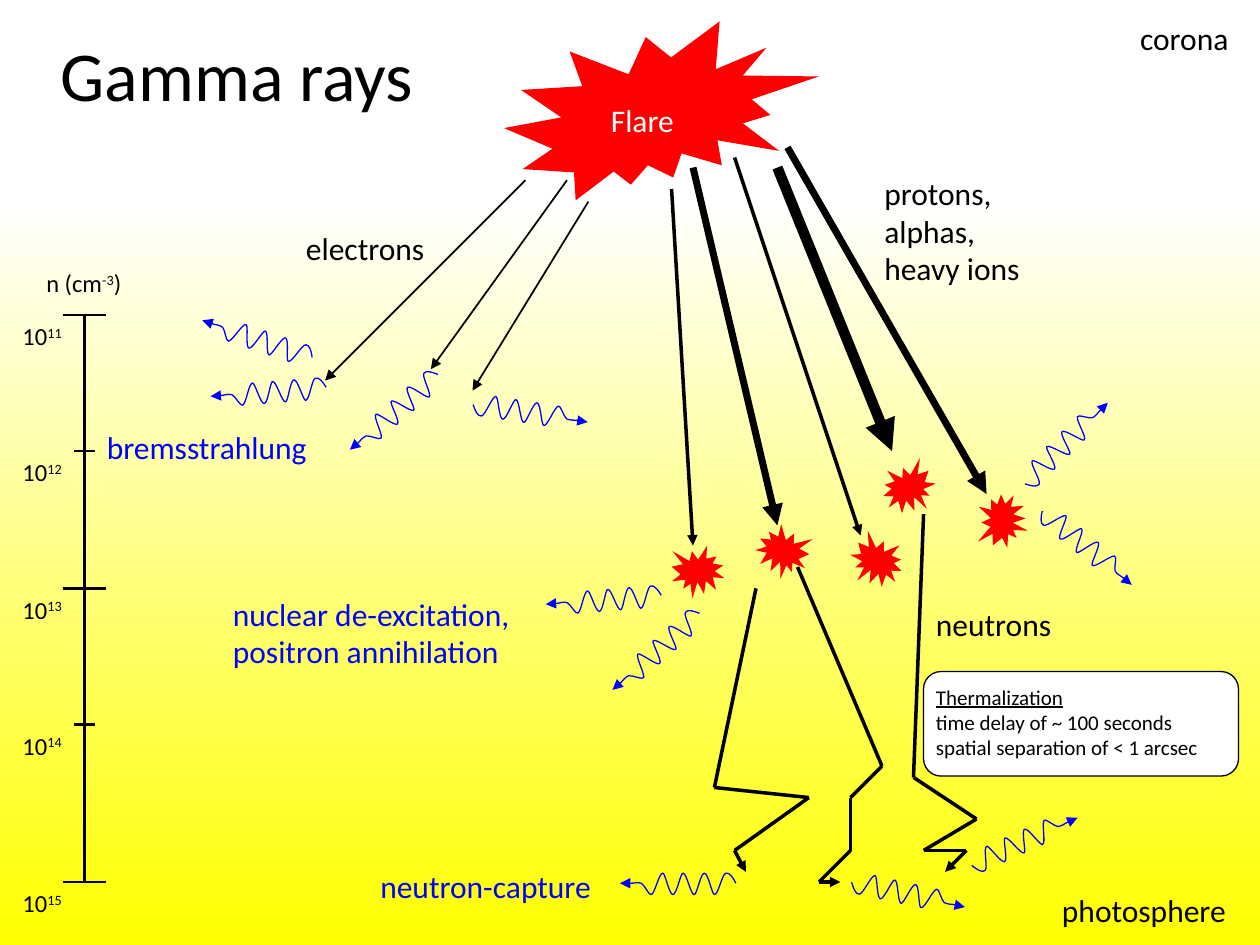
from itertools import pairwise

from lxml.etree import SubElement
from pptx import Presentation
from pptx.dml.color import RGBColor
from pptx.enum.shapes import MSO_CONNECTOR as CONNECTOR, MSO_SHAPE as SHAPE
from pptx.enum.text import MSO_ANCHOR as ANCHOR, PP_ALIGN as ALIGN
from pptx.oxml.ns import qn
from pptx.util import Cm, Pt

BLACK, WHITE, RED, BLUE, YELLOW = "000000", "FFFFFF", "FF0000", "0000FF", "FFFF00"
FONT = "Calibri"

PARTICLES = [
    ((4.5, 1.43), (3.42, 2.93), 1),
    ((4.67, 1.6), (3.75, 3.1), 1),
    ((4.17, 1.43), (2.58, 3.02), 1),
    ((5.33, 1.5), (5.5, 4.33), 2),
    ((5.83, 1.25), (6.83, 4.25), 2),
    ((5.5, 1.33), (6.17, 4.17), 4),
    ((6.25, 1.17), (7.83, 3.92), 4),
    ((6.17, 1.33), (7.08, 3.58), 6),
]
NEUTRON_TRACKS = [
    [(6.33, 4.5), (7, 6.08), (6.75, 6.33), (6.75, 6.75), (6.5, 7), (6.67, 7)],
    [(7.33, 4.08), (7.25, 6.17), (7.75, 6.5), (7.33, 6.75), (7.67, 6.75), (7.5, 6.92)],
    [(6, 4.67), (5.67, 6.25), (6.42, 6.33), (5.83, 6.75), (5.92, 6.92)],
]
BURSTS = [
    (5.33, 4.33, 0, False),
    (6, 4.17, 16.3, True),
    (6.75, 4.25, 34.5, False),
    (7, 3.67, 329.6, True),
    (7.75, 3.92, 280.5, False),
]
PHOTONS = [
    (1.58, 2.6, 198.7),
    (2.67, 3.18, 139.5),
    (3.75, 3.18, 8.7),
    (1.67, 3.02, 175.6),
    (4.33, 4.67, 175.6),
    (4.75, 5.08, 138.7),
    (8, 3.42, 315.6),
    (8.17, 4.25, 39.5),
    (7.67, 6.58, 335.7),
    (6.75, 7, 12.4),
    (4.92, 6.92, 180),
]
WAVE = [
    (0, 0),
    (2, 4), (5, 9), (8, 8), (11, 7), (14, -9), (17, -9),
    (19, -9), (22, 8), (25, 8), (28, 8), (31, -9), (33, -9),
    (36, -9), (39, 8), (42, 8), (44, 8), (47, -9), (50, -9),
    (53, -9), (56, 8), (58, 8), (61, 8), (64, -7), (67, -9),
    (69, -10), (72, -2), (75, 0), (78, 1), (81, 0), (83, 0),
    (86, 0), (89, 0), (92, 0),
]
LABELS = [
    ("Flare", 4.75, 0.75, 0.83, 0.4, WHITE),
    ("electrons", 2.33, 1.77, 1.25, 0.4, BLACK),
    ("protons, alphas, heavy ions", 6.92, 1.33, 1.42, 1, BLACK),
    ("neutrons", 7.33, 4.75, 1.25, 0.4, BLACK),
    ("bremsstrahlung", 0.75, 3.35, 2, 0.4, BLUE),
    ("nuclear de-excitation, positron annihilation", 1.75, 4.67, 2.67, 0.7, BLUE),
    ("neutron-capture", 2.92, 6.83, 2.08, 0.4, BLUE),
    ("photosphere", 8.33, 7.02, 1.75, 0.4, BLACK),
    ("corona", 8.95, 0.1, 0.97, 0.4, BLACK),
]
THERMALIZATION = [
    "Thermalization",
    "time delay of ~ 100 seconds",
    "spatial separation of < 1 arcsec",
]
AXIS_X = 0.67
TICKS = [
    (2.5, 0.17, "11"),
    (3.58, 0.085, "12"),
    (4.67, 0.17, "13"),
    (5.75, 0.085, "14"),
    (7, 0.17, "15"),
]


def inches(value):
    return Cm(value * 2.54)


def color(value):
    return RGBColor.from_string(value)


def add_arrowhead(line):
    SubElement(line._get_or_add_ln(), qn("a:tailEnd"), type="triangle")


def add_filled(shapes, kind, left, top, width, height, fill):
    shape = shapes.add_shape(kind, *map(inches, (left, top, width, height)))
    shape.shadow.inherit = False
    shape.fill.solid()
    shape.fill.fore_color.rgb = color(fill)
    shape.line.fill.background()
    return shape


def add_line(shapes, start, end, width, arrow=False):
    connector = shapes.add_connector(CONNECTOR.STRAIGHT, *map(inches, start + end))
    connector.line.color.rgb = color(BLACK)
    connector.line.width = Pt(width)
    if arrow:
        add_arrowhead(connector.line)
    SubElement(connector._element.spPr, qn("a:effectLst"))


def add_text(shapes, paragraphs, left, top, width, height, size, ink=BLACK,
             align=ALIGN.LEFT, wrap=True):
    box = shapes.add_textbox(*map(inches, (left, top, width, height)))
    frame = box.text_frame
    frame.word_wrap = wrap
    for index, runs in enumerate(paragraphs):
        paragraph = frame.paragraphs[0] if index == 0 else frame.add_paragraph()
        paragraph.alignment = align
        for text, raised in runs:
            run = paragraph.add_run()
            run.text = text
            run.font.name = FONT
            run.font.size = Pt(size)
            run.font.color.rgb = color(ink)
            if raised:
                run._r.get_or_add_rPr().set("baseline", "30000")
    return frame


def add_photon(shapes, left, top, rotation):
    builder = shapes.build_freeform(*WAVE[0], scale=inches(0.01))
    builder.add_line_segments(WAVE[1:], close=False)
    wave = builder.convert_to_shape()
    wave.left, wave.top, wave.rotation = inches(left), inches(top), rotation
    wave.shadow.inherit = False
    wave.fill.background()
    wave.line.color.rgb = color(BLUE)
    wave.line.width = Pt(0.75)
    add_arrowhead(wave.line)
    outline = next(wave._element.iter(qn("a:path")))
    segments = outline.findall(qn("a:lnTo"))
    for first in range(0, len(segments), 3):
        curve = SubElement(outline, qn("a:cubicBezTo"))
        for segment in segments[first:first + 3]:
            curve.append(segment[0])
            outline.remove(segment)


def main():
    presentation = Presentation()
    presentation.slide_width, presentation.slide_height = inches(10), inches(7.5)
    slide = presentation.slides.add_slide(presentation.slide_layouts[6])
    shapes = slide.shapes

    sky = add_filled(shapes, SHAPE.RECTANGLE, 0, 1.58, 10, 5.92, WHITE)
    sky.fill.gradient()
    sky.fill.gradient_angle = 270
    for stop, (position, tint) in zip(sky.fill.gradient_stops, [(0, WHITE), (1, YELLOW)]):
        stop.position = position
        stop.color.rgb = color(tint)
    add_filled(shapes, SHAPE.EXPLOSION2, 4, 0.17, 2.5, 1.42, RED)

    for start, end, width in PARTICLES:
        add_line(shapes, start, end, width, arrow=True)
    for track in NEUTRON_TRACKS:
        for start, end in pairwise(track):
            add_line(shapes, start, end, 2, arrow=end == track[-1])
    for photon in PHOTONS:
        add_photon(shapes, *photon)
    for left, top, rotation, flipped in BURSTS:
        burst = add_filled(shapes, SHAPE.EXPLOSION1, left, top, 0.42, 0.42, RED)
        burst.rotation = rotation
        if flipped:
            burst._element.spPr.xfrm.set("flipH", "1")

    for text, left, top, width, height, ink in LABELS:
        add_text(shapes, [[(text, False)]], left, top, width, height, 18, ink,
                 wrap=text != "corona")
    title = add_text(shapes, [[("Gamma rays", False)]], 0.17, 0.17, 3.42, 0.83, 40,
                     align=ALIGN.CENTER)
    title.vertical_anchor = ANCHOR.MIDDLE

    panel = add_filled(shapes, SHAPE.ROUNDED_RECTANGLE, 7.33, 5.33, 2.5, 0.83, WHITE)
    panel.line.color.rgb = color(BLACK)
    panel.line.width = Pt(0.75)
    note = add_text(shapes, [[(text, False)] for text in THERMALIZATION],
                    7.33, 5.38, 2.67, 0.7, 12)
    note.paragraphs[0].runs[0].font.underline = True

    add_text(shapes, [[("n (cm", False), ("-3", True), (")", False)]],
             0.08, 2.08, 1.17, 0.33, 14, align=ALIGN.CENTER)
    add_line(shapes, (AXIS_X, TICKS[0][0]), (AXIS_X, TICKS[-1][0]), 1.5)
    for y, reach, exponent in TICKS:
        add_line(shapes, (AXIS_X - reach, y), (AXIS_X + reach, y), 1.5)
        add_text(shapes, [[("10", False), (exponent, True)]], 0.08, y, 0.58, 0.33, 14)

    presentation.save("out.pptx")


if __name__ == "__main__":
    main()
